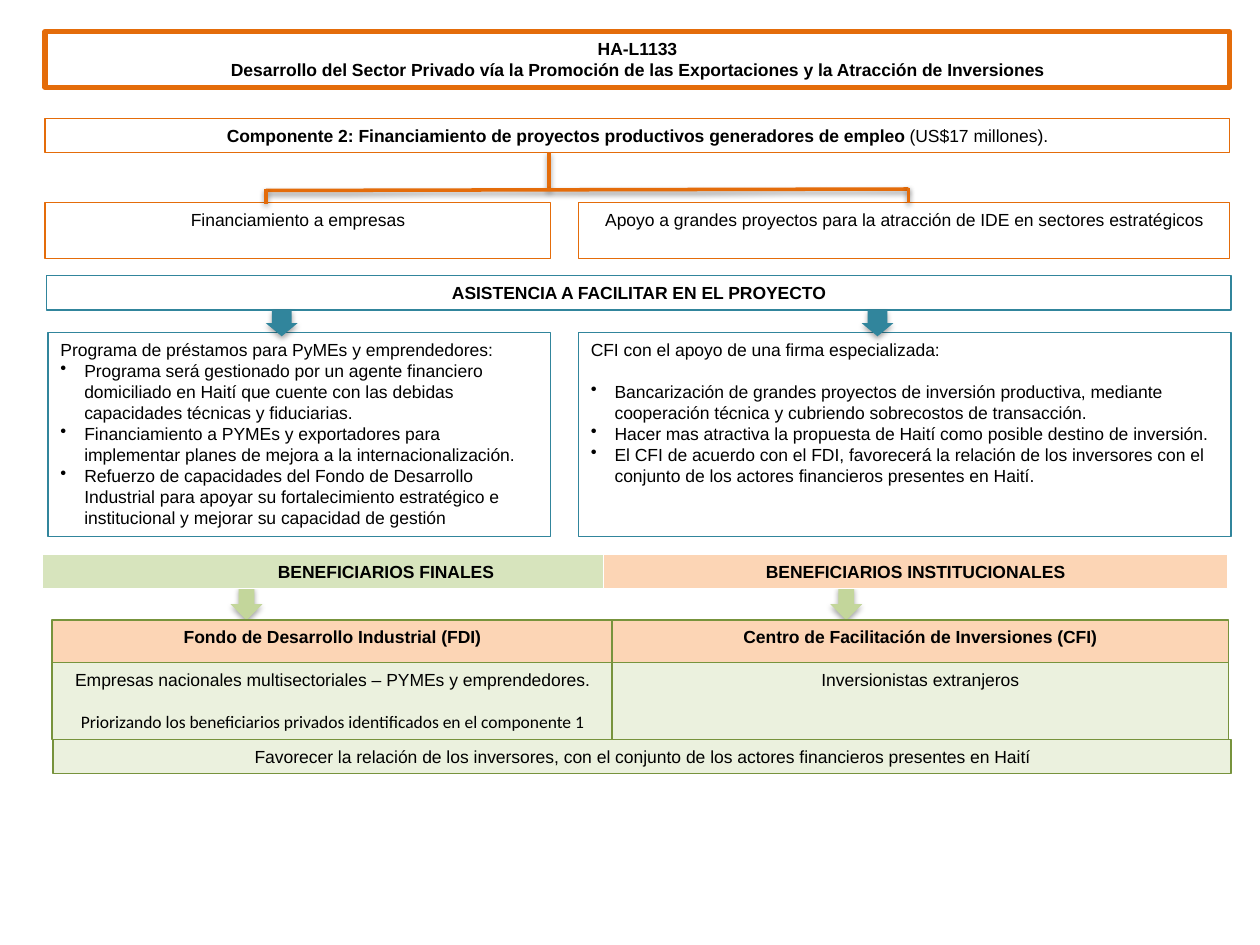
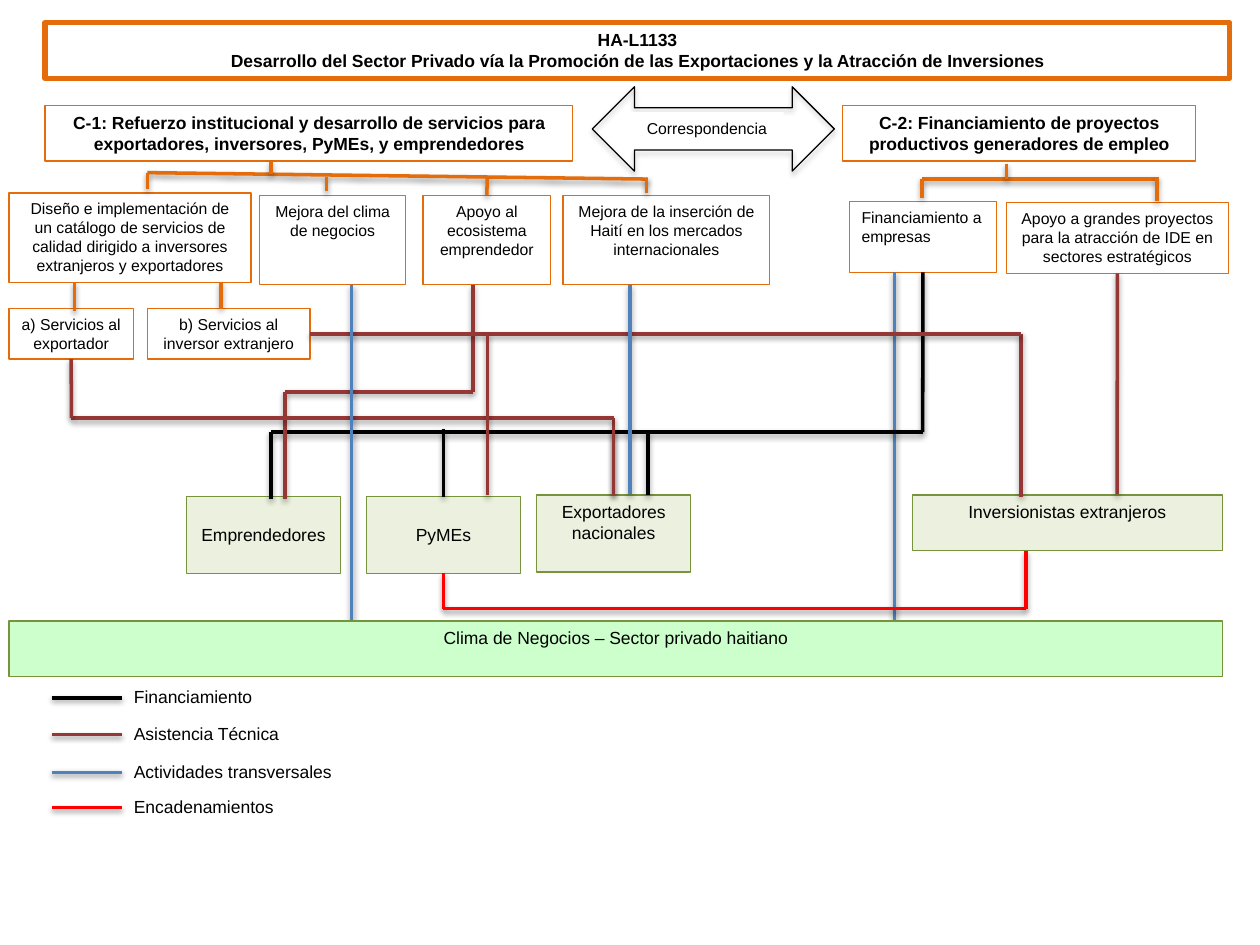
"""Build two slides on the components and beneficiaries of project HA-L1133."""
from itertools import pairwise

from lxml.etree import SubElement
from pptx import Presentation
from pptx.dml.color import RGBColor
from pptx.enum.shapes import MSO_CONNECTOR, MSO_SHAPE
from pptx.enum.text import MSO_ANCHOR, PP_ALIGN
from pptx.oxml.ns import qn
from pptx.util import Cm, Pt

RECTANGLE = MSO_SHAPE.RECTANGLE
DOWN_ARROW = MSO_SHAPE.DOWN_ARROW
DOUBLE_ARROW = MSO_SHAPE.LEFT_RIGHT_ARROW
STRAIGHT = MSO_CONNECTOR.STRAIGHT
LEFT, CENTER = PP_ALIGN.LEFT, PP_ALIGN.CENTER
TOP, MIDDLE = MSO_ANCHOR.TOP, MSO_ANCHOR.MIDDLE
TOP_SITE, BOTTOM_SITE, RIGHT_SITE = 0, 2, 3

BLACK = RGBColor(0x00, 0x00, 0x00)
WHITE = RGBColor(0xFF, 0xFF, 0xFF)
ORANGE = RGBColor(0xE4, 0x6C, 0x0A)
TEAL = RGBColor(0x31, 0x85, 0x9C)
DARK_GREEN = RGBColor(0x77, 0x93, 0x3C)
ARROW_GREEN = RGBColor(0xC3, 0xD6, 0x9B)
BAND_GREEN = RGBColor(0xD7, 0xE4, 0xBD)
PALE_GREEN = RGBColor(0xEB, 0xF1, 0xDE)
MINT = RGBColor(0xCC, 0xFF, 0xCC)
PEACH = RGBColor(0xFC, 0xD5, 0xB5)
MAROON = RGBColor(0x95, 0x37, 0x35)
BLUE = RGBColor(0x4F, 0x81, 0xBD)
RED = RGBColor(0xFF, 0x00, 0x00)


def add_box(slide, place, text="", kind=RECTANGLE, fill=None, line=None, width=0.75,
            size=10, bold=False, align=CENTER, anchor=TOP, bullets=False, shadow=False):
    lengths = [Cm(value) for value in place]
    if kind is None:
        shape = slide.shapes.add_textbox(*lengths)
    else:
        shape = slide.shapes.add_shape(kind, *lengths)
    if not shadow:
        shape.shadow.inherit = False
    if fill is None:
        shape.fill.background()
    else:
        shape.fill.solid()
        shape.fill.fore_color.rgb = fill
    if line is None:
        shape.line.fill.background()
    else:
        shape.line.color.rgb = line
        shape.line.width = Pt(width)
    frame = shape.text_frame
    frame.word_wrap = True
    frame.vertical_anchor = anchor
    frame.text = text
    for index, paragraph in enumerate(frame.paragraphs):
        paragraph.alignment = align
        for run in paragraph.runs:
            run.font.name = "Arial"
            run.font.size = Pt(size)
            run.font.bold = bold
            run.font.color.rgb = BLACK
        if bullets and index > 0:
            properties = paragraph._p.get_or_add_pPr()
            properties.set("marL", str(Cm(0.48)))
            properties.set("indent", str(-Cm(0.48)))
            SubElement(properties, qn("a:buChar")).set("char", "•")
    return shape


def draw_line(slide, color, *points, start=None, end=None):
    connectors = []
    for first, second in pairwise(points):
        connector = slide.shapes.add_connector(
            STRAIGHT, Cm(first[0]), Cm(first[1]), Cm(second[0]), Cm(second[1]))
        connector.line.color.rgb = color
        connector.line.width = Pt(2)
        connectors.append(connector)
    if start:
        connectors[0].begin_connect(*start)
    if end:
        connectors[-1].end_connect(*end)


presentation = Presentation()
presentation.slide_width = Cm(25.4)
presentation.slide_height = Cm(19.05)
slides = []
for title_top in (0.64, 0.46):
    slide = presentation.slides.add_slide(presentation.slide_layouts[6])
    add_box(slide, (0.91, title_top, 23.88, 1.12),
            "HA-L1133\nDesarrollo del Sector Privado vía la Promoción de las "
            "Exportaciones y la Atracción de Inversiones", line=ORANGE, width=3, bold=True)
    slides.append(slide)
component, relations = slides

heading = add_box(component, (0.91, 2.39, 23.88, 0.69),
                  "Componente 2: Financiamiento de proyectos productivos generadores de empleo ",
                  line=ORANGE, bold=True)
amount = heading.text_frame.paragraphs[0].add_run()
amount.text = "(US$17 millones)."
amount.font.name = "Arial"
amount.font.size = Pt(10)
amount.font.color.rgb = BLACK
add_box(component, (0.91, 4.09, 10.19, 1.12), "Financiamiento a empresas", line=ORANGE)
add_box(component, (11.66, 4.09, 13.13, 1.12),
        "Apoyo a grandes proyectos para la atracción de IDE en sectores estratégicos",
        line=ORANGE)
draw_line(component, ORANGE, (11.07, 3.07), (11.07, 3.84))
draw_line(component, ORANGE, (18.31, 3.81), (5.36, 3.84))
draw_line(component, ORANGE, (18.31, 3.78), (18.31, 4.09))
draw_line(component, ORANGE, (5.36, 3.81), (5.36, 4.11))

add_box(component, (0.97, 6.71, 10.13, 4.11),
        "Programa de préstamos para PyMEs y emprendedores:\n"
        "Programa será gestionado por un agente financiero domiciliado en Haití que cuente "
        "con las debidas capacidades técnicas y fiduciarias.\n"
        "Financiamiento a PYMEs y exportadores para implementar planes de mejora a la "
        "internacionalización.\n"
        "Refuerzo de capacidades del Fondo de Desarrollo Industrial para apoyar su "
        "fortalecimiento estratégico e institucional y mejorar su capacidad de gestión",
        fill=WHITE, line=TEAL, align=LEFT, bullets=True)
facilitation = add_box(
    component, (11.66, 6.71, 13.16, 4.11),
    "CFI con el apoyo de una firma especializada:\n"
    "Bancarización de grandes proyectos de inversión productiva, mediante cooperación "
    "técnica y cubriendo sobrecostos de transacción.\n"
    "Hacer mas atractiva la propuesta de Haití como posible destino de inversión.\n"
    "El CFI de acuerdo con el FDI, favorecerá la relación de los inversores con el "
    "conjunto de los actores financieros presentes en Haití.",
    fill=WHITE, line=TEAL, align=LEFT, bullets=True)
facilitation.text_frame.paragraphs[1].space_before = Pt(12)
add_box(component, (0.94, 5.56, 23.88, 0.69), "ASISTENCIA A FACILITAR EN EL PROYECTO",
        line=TEAL, bold=True)
for left in (5.36, 17.37):
    arrow = add_box(component, (left, 6.25, 0.64, 0.53), kind=DOWN_ARROW, fill=TEAL,
                    shadow=True)
    arrow.adjustments[0] = 0.625
for left in (4.65, 16.74):
    add_box(component, (left, 11.84, 0.64, 0.66), kind=DOWN_ARROW, fill=ARROW_GREEN,
            shadow=True)

add_box(component, (0.86, 11.18, 13.84, 0.69), "BENEFICIARIOS FINALES",
        fill=BAND_GREEN, line=WHITE, bold=True)
add_box(component, (12.17, 11.18, 12.57, 0.69), "BENEFICIARIOS INSTITUCIONALES",
        fill=PEACH, line=WHITE, bold=True)
beneficiaries = [
    (1.05, 11.3, "Fondo de Desarrollo Industrial (FDI)",
     "Empresas nacionales multisectoriales – PYMEs y emprendedores.\n"
     "Priorizando los beneficiarios privados identificados en el componente 1"),
    (12.34, 12.42, "Centro de Facilitación de Inversiones (CFI)", "Inversionistas extranjeros"),
]
for left, width, institution, final_users in beneficiaries:
    add_box(component, (left, 12.5, width, 2.39), institution,
            fill=PEACH, line=DARK_GREEN, bold=True)
    users = add_box(component, (left, 13.36, width, 1.55), final_users,
                    fill=PALE_GREEN, line=DARK_GREEN)
    for paragraph in users.text_frame.paragraphs[1:]:
        paragraph.space_before = Pt(12)
        paragraph.runs[0].font.name = "Calibri"
add_box(component, (1.07, 14.91, 23.75, 0.69),
        "Favorecer la relación de los inversores, con el conjunto de los actores "
        "financieros presentes en Haití", fill=PALE_GREEN, line=DARK_GREEN)

add_box(relations, (0.91, 2.13, 10.64, 1.12),
        "C-1: Refuerzo institucional y desarrollo de servicios para exportadores, "
        "inversores, PyMEs, y emprendedores", line=ORANGE, bold=True)
add_box(relations, (16.99, 2.13, 7.11, 1.12),
        "C-2: Financiamiento de proyectos productivos generadores de empleo",
        line=ORANGE, bold=True)
add_box(relations, (11.94, 1.75, 4.88, 1.7), kind=DOUBLE_ARROW, line=BLACK, shadow=True)
add_box(relations, (12.7, 2.26, 3.1, 0.64), "Correspondencia", fill=WHITE, size=9)

activities = {}
for name, place, text in [
    ("catalogue", (0.18, 3.89, 4.88, 1.8),
     "Diseño e implementación de un catálogo de servicios de calidad dirigido a "
     "inversores extranjeros y exportadores"),
    ("climate", (5.23, 3.94, 2.95, 1.8), "Mejora del clima de negocios"),
    ("ecosystem", (8.53, 3.94, 2.57, 1.8), "Apoyo al ecosistema emprendedor"),
    ("markets", (11.35, 3.94, 4.17, 1.8),
     "Mejora de la inserción de Haití en los mercados internacionales"),
    ("exporter services", (0.18, 6.22, 2.51, 1.02), "a) Servicios al exportador"),
    ("investor services", (2.97, 6.22, 3.28, 1.02), "b) Servicios al inversor extranjero"),
    ("financing", (17.12, 4.07, 2.97, 1.42), "Financiamiento a empresas"),
    ("large projects", (20.29, 4.09, 4.47, 1.42),
     "Apoyo a grandes proyectos para la atracción de IDE en sectores estratégicos"),
]:
    activities[name] = add_box(relations, place, text, line=ORANGE, size=9,
                               align=LEFT if name == "financing" else CENTER)

groups = {}
for text, place, anchor in [
    ("Emprendedores", (3.76, 10.01, 3.1, 1.55), MIDDLE),
    ("PyMEs", (7.39, 10.01, 3.1, 1.55), MIDDLE),
    ("Exportadores nacionales", (10.82, 9.98, 3.1, 1.55), TOP),
    ("Inversionistas extranjeros", (18.39, 9.98, 6.25, 1.12), TOP),
]:
    groups[text] = add_box(relations, place, text, fill=PALE_GREEN, line=DARK_GREEN,
                           anchor=anchor)
smes = groups["PyMEs"]
exporters = groups["Exportadores nacionales"]

draw_line(relations, ORANGE, (13.06, 3.61), (2.97, 3.48))
draw_line(relations, ORANGE, (23.32, 3.61), (18.59, 3.61))
draw_line(relations, ORANGE, (9.82, 3.61), (9.82, 3.94),
          end=(activities["ecosystem"], TOP_SITE))
for x, top, bottom in [(5.46, 3.25, 3.51), (2.97, 3.48, 3.81), (6.58, 3.56, 3.86),
                       (13.03, 3.58, 3.89), (1.5, 5.69, 6.27), (4.45, 5.69, 6.22),
                       (20.29, 3.3, 3.61), (18.59, 3.61, 3.99), (23.32, 3.56, 4.06)]:
    draw_line(relations, ORANGE, (x, top), (x, bottom))

draw_line(relations, BLUE, (18.03, 5.49), (18.03, 12.52))
draw_line(relations, BLACK, (18.6, 5.49), (18.6, 8.71), (5.46, 8.71), (5.46, 10.06),
          start=(activities["financing"], BOTTOM_SITE))
draw_line(relations, BLACK, (8.94, 8.64), (8.94, 10.01), end=(smes, TOP_SITE))
draw_line(relations, BLACK, (12.37, 8.64), (12.37, 9.98), end=(exporters, TOP_SITE))
draw_line(relations, BLACK, (13.06, 8.71), (13.06, 9.98))
draw_line(relations, MAROON, (9.53, 5.74), (9.53, 7.9), (5.74, 7.9), (5.74, 10.06))
draw_line(relations, MAROON, (12.37, 9.98), (12.37, 8.43), (1.44, 8.43), (1.44, 7.24),
          start=(exporters, TOP_SITE), end=(activities["exporter services"], BOTTOM_SITE))
draw_line(relations, MAROON, (20.58, 10.01), (20.58, 6.73), (6.25, 6.73),
          end=(activities["investor services"], RIGHT_SITE))
draw_line(relations, MAROON, (9.83, 6.73), (9.83, 9.98))
draw_line(relations, MAROON, (22.52, 5.51), (22.52, 9.96),
          start=(activities["large projects"], BOTTOM_SITE))
draw_line(relations, RED, (8.94, 11.56), (8.94, 12.27), (20.68, 12.27), (20.68, 11.1),
          start=(smes, BOTTOM_SITE))
draw_line(relations, BLUE, (12.7, 5.74), (12.7, 9.96))
draw_line(relations, BLUE, (7.09, 5.74), (7.09, 12.52))
add_box(relations, (0.18, 12.52, 24.46, 1.12), "Clima de Negocios – Sector privado haitiano",
        fill=MINT, line=DARK_GREEN)

for text, color, y in [("Financiamiento", BLACK, 14.07), ("Asistencia Técnica", MAROON, 14.81),
                       ("Actividades transversales", BLUE, 15.57),
                       ("Encadenamientos", RED, 16.28)]:
    draw_line(relations, color, (1.04, y), (2.46, y))
    add_box(relations, (2.45, y - 0.36, 4.85, 0.69), text, kind=None, align=LEFT)

presentation.save("out.pptx")
